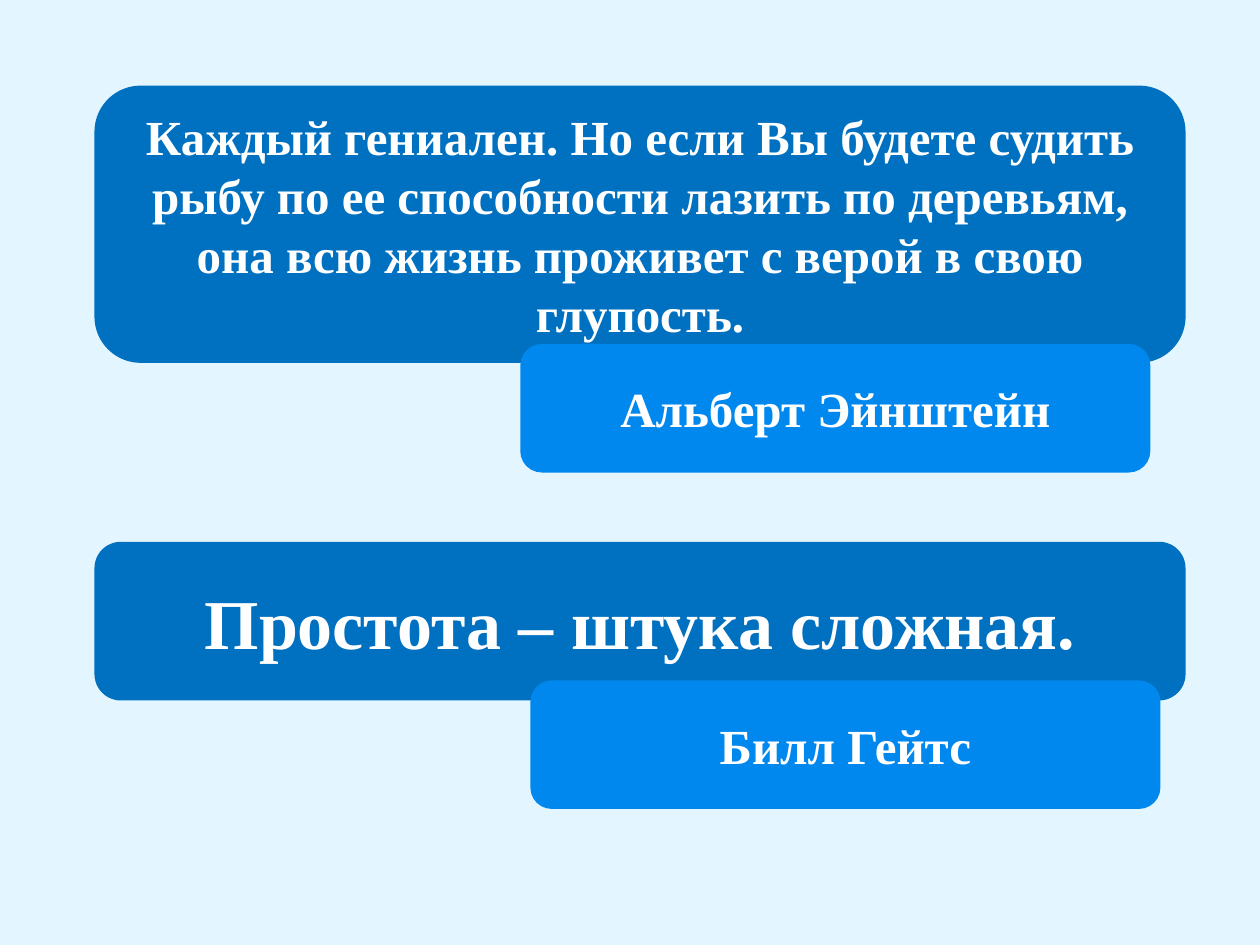
from dataclasses import dataclass

from pptx import Presentation
from pptx.dml.color import RGBColor
from pptx.enum.shapes import MSO_SHAPE
from pptx.enum.text import MSO_ANCHOR, PP_ALIGN
from pptx.slide import Slide
from pptx.util import Inches, Pt

COLOURS = {
    "background": "E3F6FF",
    "quote": "0070C0",
    "author": "0088EE",
    "text": "FFFFFF",
}
FONT_FORMAT = {"name": "Times New Roman", "bold": True}


@dataclass(frozen=True)
class Card:
    text: str
    left: float
    top: float
    width: float
    height: float
    colour: str
    size: int = 28


def quote_card(text: str, top: float, height: float, size: int = 28) -> Card:
    return Card(text, 0.75, top, 8.66, height, "quote", size)


def author_card(text: str, left: float, top: float) -> Card:
    return Card(text, left, top, 5, 1.02, "author")


CARDS = [
    quote_card(
        "Каждый гениален. Но если Вы будете судить рыбу по ее способности "
        "лазить по деревьям, она всю жизнь проживет с верой в свою глупость.",
        top=0.68,
        height=2.2,
    ),
    quote_card("Простота – штука сложная.", top=4.3, height=1.26, size=40),
    author_card("Альберт Эйнштейн", left=4.13, top=2.73),
    author_card("Билл Гейтс", left=4.21, top=5.4),
]


def draw_card(slide: Slide, card: Card) -> None:
    bounds = [Inches(n) for n in (card.left, card.top, card.width, card.height)]
    shape = slide.shapes.add_shape(MSO_SHAPE.ROUNDED_RECTANGLE, *bounds)
    shape.shadow.inherit = False
    shape.fill.solid()
    shape.fill.fore_color.rgb = RGBColor.from_string(COLOURS[card.colour])
    shape.line.fill.background()

    text_frame = shape.text_frame
    text_frame.word_wrap = True
    text_frame.vertical_anchor = MSO_ANCHOR.MIDDLE
    paragraph = text_frame.paragraphs[0]
    paragraph.alignment = PP_ALIGN.CENTER
    run = paragraph.add_run()
    run.text = card.text
    for attribute, value in {**FONT_FORMAT, "size": Pt(card.size)}.items():
        setattr(run.font, attribute, value)
    run.font.color.rgb = RGBColor.from_string(COLOURS["text"])


def main() -> None:
    presentation = Presentation()
    presentation.slide_width = Inches(10)
    presentation.slide_height = Inches(7.5)
    slide = presentation.slides.add_slide(presentation.slide_layouts[6])
    background = slide.background.fill
    background.solid()
    background.fore_color.rgb = RGBColor.from_string(COLOURS["background"])
    for card in CARDS:
        draw_card(slide, card)
    presentation.save("out.pptx")


if __name__ == "__main__":
    main()
